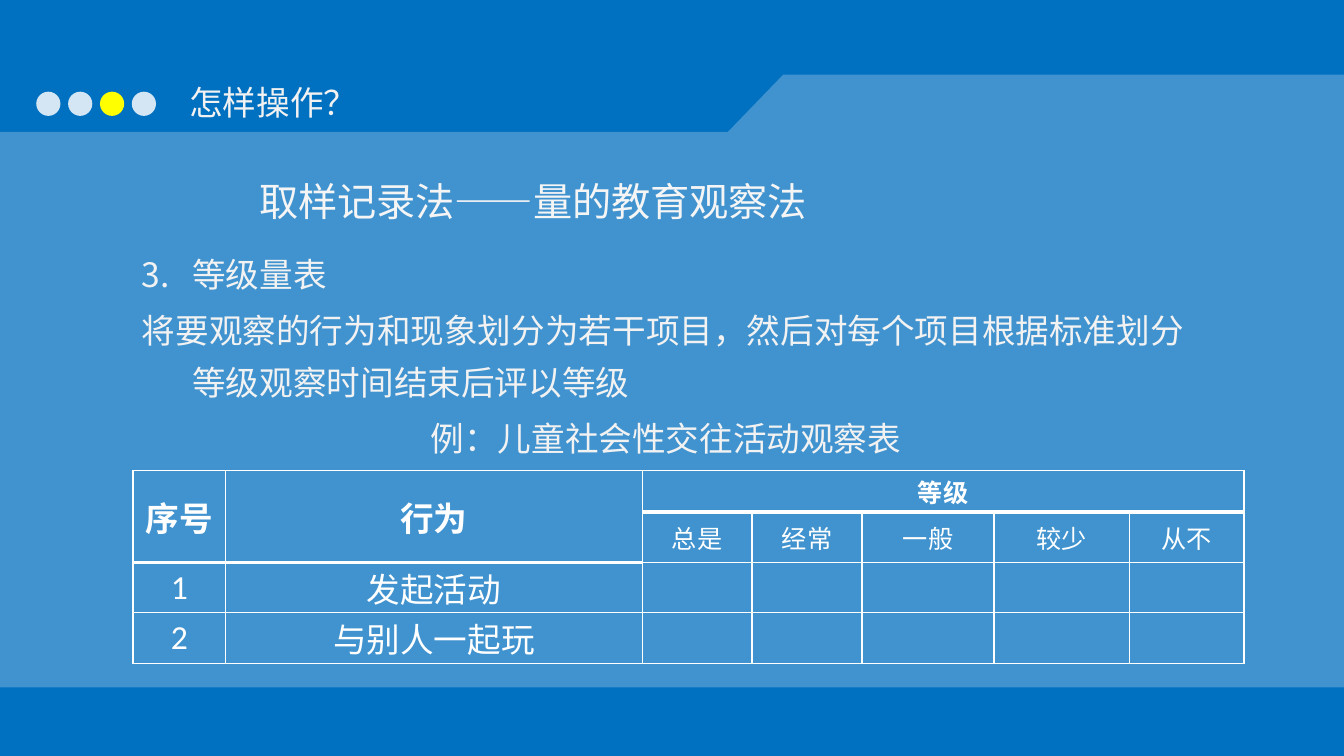
import pptx
import pptx.dml.color
import pptx.enum.shapes
import pptx.enum.text
import pptx.oxml.ns
import pptx.util
from dataclasses import dataclass
from lxml import etree

ALIGN = pptx.enum.text.PP_ALIGN
ANCHOR = pptx.enum.text.MSO_ANCHOR
qn = pptx.oxml.ns.qn


@dataclass(frozen=True)
class Theme:
    background: str = "0070C0"
    white: str = "FFFFFF"
    text: str = "F2F2F2"
    accent: str = "FFFF00"
    font: str = "Noto Sans CJK SC"
    table_font: str = "Calibri"
    title_size: int = 28
    body_size: int = 24
    small_size: int = 18
    thin: int = 1
    heavy: int = 3


def rgb(color):
    return pptx.dml.color.RGBColor.from_string(color)


class SlideBuilder:
    """Places elements on a grid of 100 columns by 100 rows."""

    def __init__(self, prs, theme):
        self.theme = theme
        self.column = prs.slide_width / 100
        self.row = prs.slide_height / 100
        self.slide = prs.slides.add_slide(prs.slide_layouts[5])
        self.slide.background.fill.solid()
        self.slide.background.fill.fore_color.rgb = rgb(theme.background)

    def x(self, columns):
        return round(columns * self.column)

    def y(self, rows):
        return round(rows * self.row)

    def box(self, left, top, width, height):
        return self.x(left), self.y(top), self.x(width), self.y(height)

    def paint(self, shape, color, opacity):
        shape.shadow.inherit = False
        shape.line.fill.background()
        shape.fill.solid()
        shape.fill.fore_color.rgb = rgb(color)
        if opacity < 100:
            tint = shape.fill._xPr.find(".//" + qn("a:srgbClr"))
            etree.SubElement(tint, qn("a:alpha"), val=str(opacity * 1000))

    def polygon(self, corners, color, opacity):
        points = [(self.x(x), self.y(y)) for x, y in corners]
        builder = self.slide.shapes.build_freeform(*points[0])
        builder.add_line_segments(points[1:], close=True)
        self.paint(builder.convert_to_shape(), color, opacity)

    def dot(self, box, color, opacity):
        oval = pptx.enum.shapes.MSO_SHAPE.OVAL
        self.paint(self.slide.shapes.add_shape(oval, *self.box(*box)), color, opacity)

    def style(self, paragraph, size, color, font, bold=False, align=ALIGN.LEFT):
        paragraph.alignment = align
        paragraph.font.size = pptx.util.Pt(size)
        paragraph.font.bold = bold
        paragraph.font.color.rgb = rgb(color)
        paragraph.font.name = font
        properties = paragraph._p.find(".//" + qn("a:defRPr"))
        etree.SubElement(properties, qn("a:ea"), typeface=self.theme.font)

    def spread(self, paragraph):
        paragraph.line_spacing = 1.3
        paragraph.space_before = pptx.util.Pt(2)
        paragraph.space_after = pptx.util.Pt(0.6)

    def title(self, text, box):
        heading = self.slide.shapes.title
        heading.left, heading.top, heading.width, heading.height = self.box(*box)
        frame = heading.text_frame
        frame.text = text
        frame.vertical_anchor = ANCHOR.TOP
        frame.auto_size = pptx.enum.text.MSO_AUTO_SIZE.NONE
        self.spread(frame.paragraphs[0])
        self.style(frame.paragraphs[0], self.theme.title_size, self.theme.text, self.theme.font)

    def text(self, lines, box, hanging=0):
        """Adds (text, alignment) lines; a hanging indent also opens their spacing."""
        frame = self.slide.shapes.add_textbox(*self.box(*box)).text_frame
        frame.word_wrap = True
        for index, (line, align) in enumerate(lines):
            paragraph = frame.paragraphs[0] if index == 0 else frame.add_paragraph()
            paragraph.text = line
            if hanging:
                self.spread(paragraph)
                indent = self.x(hanging)
                properties = paragraph._p.get_or_add_pPr()
                properties.set("marL", str(indent))
                properties.set("indent", str(-indent))
            self.style(paragraph, self.theme.body_size, self.theme.text, self.theme.font, align=align)

    def border(self, cell, side, width):
        line = etree.SubElement(cell._tc.get_or_add_tcPr(), qn("a:ln" + side),
                                w=str(pptx.util.Pt(width)))
        fill = etree.SubElement(line, qn("a:solidFill"))
        etree.SubElement(fill, qn("a:srgbClr"), val=self.theme.white)

    def cell(self, cell, text, size, bold, top, bottom):
        cell.margin_top = cell.margin_bottom = 0
        cell.vertical_anchor = ANCHOR.MIDDLE
        thin = self.theme.thin
        for side, width in zip("LRTB", (thin, thin, top, bottom)):
            self.border(cell, side, width)
        cell.fill.background()
        if text:
            cell.text = text
            self.style(cell.text_frame.paragraphs[0], size, self.theme.white,
                       self.theme.table_font, bold, ALIGN.CENTER)

    def rating_table(self, records, left, top, widths, heights):
        """Adds a table with a two-row header: two tall labels and one wide label."""
        table = self.slide.shapes.add_table(
            len(heights), len(widths),
            *self.box(left, top, sum(widths), sum(heights))).table
        table.first_row = table.horz_banding = False
        for column, width in zip(table.columns, widths):
            column.width = self.x(width)
        for row, height in zip(table.rows, heights):
            row.height = self.y(height)
        for label in (0, 1):
            table.cell(0, label).merge(table.cell(1, label))
        table.cell(0, 2).merge(table.cell(0, len(widths) - 1))

        thin, heavy = self.theme.thin, self.theme.heavy
        for r, record in enumerate(records):
            for c, text in enumerate(record):
                tall = c < 2
                header_end = 1 if tall else 0
                size = self.theme.small_size if r < 2 and not tall else self.theme.body_size
                self.cell(table.cell(r, c), text, size, bold=r == 0,
                          top=heavy if r == header_end + 1 else thin,
                          bottom=heavy if r in (0, header_end) else thin)


def main():
    prs = pptx.Presentation()
    prs.slide_width = pptx.util.Inches(13.333)
    prs.slide_height = pptx.util.Inches(7.5)
    theme = Theme()
    page = SlideBuilder(prs, theme)

    page.polygon([(0, 17.47), (54.15, 17.47), (58.28, 9.87), (100, 9.87),
                  (100, 90.93), (0, 90.93)], theme.white, 25)
    current_step = 2
    for step in range(4):
        color, opacity = (theme.accent, 100) if step == current_step else (theme.white, 83)
        page.dot((2.7 + 2.37 * step, 12.13, 1.8, 3.2), color, opacity)
    page.text([("怎样操作？", ALIGN.LEFT)], (13.35, 10.13, 29.55, 6.67))

    page.title("取样记录法——量的教育观察法", (18.53, 20.93, 72.23, 9.47))
    page.text([
        ("3.\t等级量表", ALIGN.LEFT),
        ("将要观察的行为和现象划分为若干项目，然后对每个项目根据标准划分等级观察时间结束后评以等级", ALIGN.LEFT),
        ("例：儿童社会性交往活动观察表", ALIGN.CENTER),
    ], (9.83, 31.33, 79.43, 57.73), hanging=3.75)

    blank_ratings = [""] * 5
    page.rating_table([
        ["序号", "行为", "等级", "", "", "", ""],
        ["", "", "总是", "经常", "一般", "较少", "从不"],
        ["1", "发起活动", *blank_ratings],
        ["2", "与别人一起玩", *blank_ratings],
    ], 9.9, 62.27, [6.9, 30.98, 8.18, 8.18, 9.83, 10.05, 8.55], [5.47, 6.67, 6.67, 6.67])

    prs.save("out.pptx")


if __name__ == "__main__":
    main()
